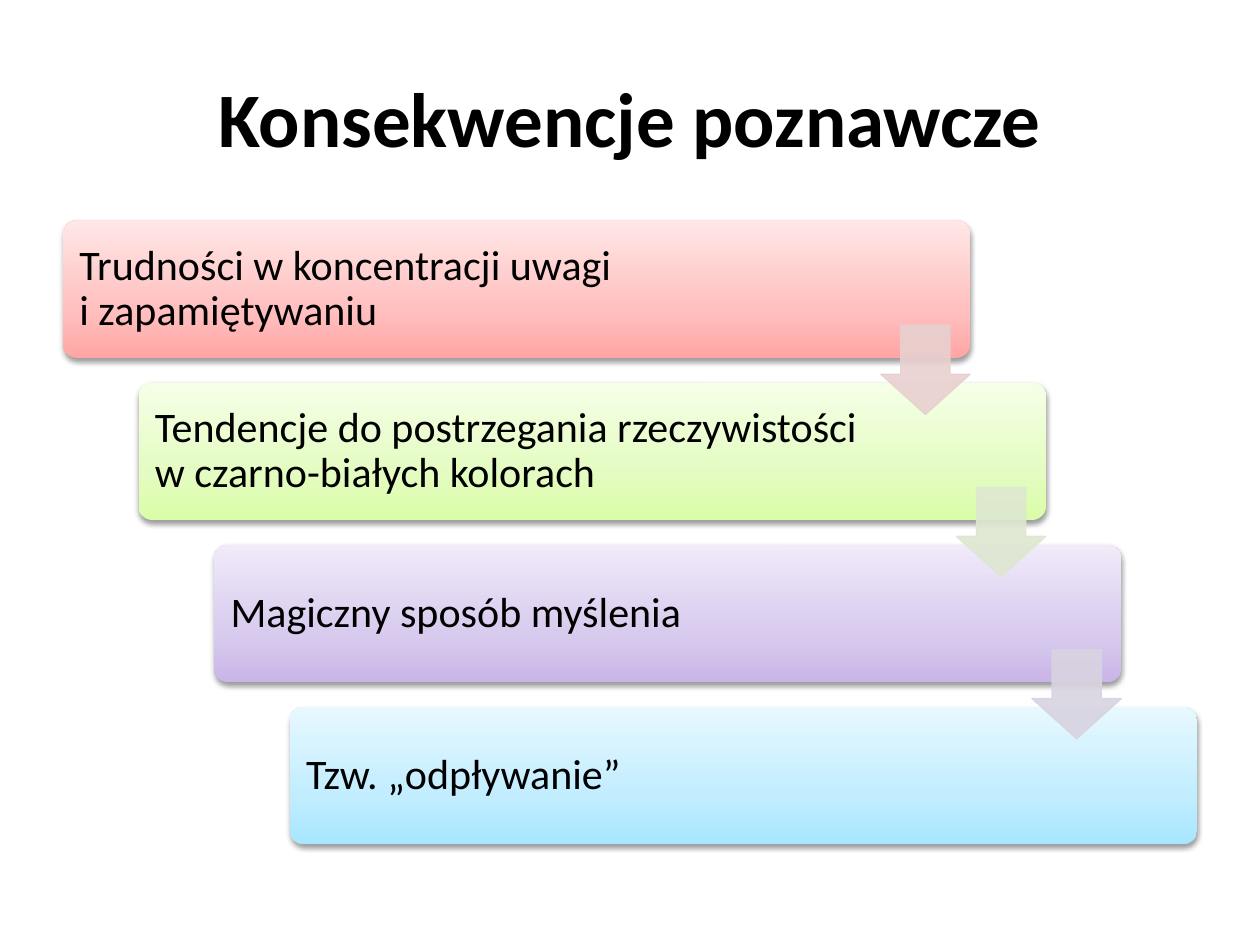
import copy

import pptx
import pptx.dml.color
import pptx.enum.shapes
import pptx.enum.text
import pptx.oxml
import pptx.oxml.ns
import pptx.util

Inches = pptx.util.Inches
SHAPES = pptx.enum.shapes.MSO_SHAPE
ALIGN = pptx.enum.text.PP_ALIGN

STEP_WIDTH, STEP_HEIGHT = 7.2, 1.09
STEP_LEFT, STEP_TOP = 0.5, 1.75
SHIFT_X, SHIFT_Y = 0.6, 1.287
ARROW_SIZE = 0.71
ARROW_DROP = 0.83  # from the top of a step to the top of its arrow
GRADIENT_POSITIONS = (0, 0.35, 1)

# Text, gradient from bottom to top, colour of the arrow to the next step
STEPS = [
    ("Trudności w koncentracji uwagi\ni zapamiętywaniu",
     ("FFA6A5", "FFC0BF", "FFE7E7"), "E8D0D0"),
    ("Tendencje do postrzegania rzeczywistości w czarno-białych kolorach",
     ("DAFDA7", "E4FCC2", "F5FFE7"), "DEE7D1"),
    ("Magiczny sposób myślenia",
     ("C9B5E8", "D8CBEE", "F0EAF9"), "D8D3E0"),
    ("Tzw. „odpływanie”",
     ("A7E6FF", "C1EDFF", "E7F8FF"), None),
]


def color(hex_text):
    return pptx.dml.color.RGBColor.from_string(hex_text)


def write_text(shape, text, size, bold=False, align=ALIGN.LEFT,
               line_spacing=None):
    frame = shape.text_frame
    frame.word_wrap = True
    frame.vertical_anchor = pptx.enum.text.MSO_ANCHOR.MIDDLE
    paragraph = frame.paragraphs[0]
    paragraph.text = text
    paragraph.alignment = align
    paragraph.line_spacing = line_spacing
    for run in paragraph.runs:
        run.font.name = "Calibri"
        run.font.size = pptx.util.Pt(size)
        run.font.bold = bold
        run.font.color.rgb = color("000000")


def fill_gradient(shape, colors):
    """Fill with a three-stop gradient that runs from bottom to top."""
    shape.fill.gradient()
    shape.fill.gradient_angle = 90
    stop_list = shape._element.spPr.find(".//" + pptx.oxml.ns.qn("a:gsLst"))
    stop_list.append(copy.deepcopy(stop_list[-1]))
    stops = shape.fill.gradient_stops
    for stop, position, hex_text in zip(stops, GRADIENT_POSITIONS, colors):
        stop.position = position
        stop.color.rgb = color(hex_text)


def add_shadow(shape):
    shape.shadow.inherit = False
    effects = shape._element.spPr.find(pptx.oxml.ns.qn("a:effectLst"))
    effects.append(pptx.oxml.parse_xml(
        f'<a:outerShdw {pptx.oxml.ns.nsdecls("a")} blurRad="40000" '
        'dist="20000" dir="5400000" rotWithShape="0">'
        '<a:srgbClr val="000000"><a:alpha val="38000"/></a:srgbClr>'
        '</a:outerShdw>'))


def set_opacity(shape, percent):
    """Apply one opacity to the fill and the line."""
    tag = pptx.oxml.ns.qn("a:srgbClr")
    for element in shape._element.spPr.iter(tag):
        alpha = element.makeelement(pptx.oxml.ns.qn("a:alpha"),
                                    {"val": str(percent * 1000)})
        element.append(alpha)


def add_step(slide, left, top, text, colors):
    step = slide.shapes.add_shape(
        SHAPES.ROUNDED_RECTANGLE, Inches(left), Inches(top),
        Inches(STEP_WIDTH), Inches(STEP_HEIGHT))
    step.adjustments[0] = 0.1
    fill_gradient(step, colors)
    step.line.fill.background()
    add_shadow(step)
    frame = step.text_frame
    frame.margin_left = frame.margin_top = frame.margin_bottom = Inches(0.1)
    frame.margin_right = Inches(1.3)  # keeps the text clear of the arrows
    write_text(step, text, 24, line_spacing=0.9)


def add_arrow(slide, left, top, hex_text):
    arrow = slide.shapes.add_shape(
        SHAPES.DOWN_ARROW, Inches(left), Inches(top),
        Inches(ARROW_SIZE), Inches(ARROW_SIZE))
    arrow.adjustments[0] = 0.55
    arrow.adjustments[1] = 0.45
    arrow.shadow.inherit = False
    arrow.fill.solid()
    arrow.fill.fore_color.rgb = color(hex_text)
    arrow.line.color.rgb = color(hex_text)
    arrow.line.width = pptx.util.Pt(0.75)
    set_opacity(arrow, 90)


def add_title(slide, text):
    title = slide.shapes.title
    title.left, title.top = Inches(0.5), Inches(0.3)
    title.width, title.height = Inches(9), Inches(1.25)
    write_text(title, text, 44, bold=True, align=ALIGN.CENTER)


def main():
    presentation = pptx.Presentation()
    presentation.slide_width = Inches(10)
    presentation.slide_height = Inches(7.5)
    slide = presentation.slides.add_slide(presentation.slide_layouts[5])
    add_title(slide, "Konsekwencje poznawcze")

    corners = [(STEP_LEFT + index * SHIFT_X, STEP_TOP + index * SHIFT_Y)
               for index in range(len(STEPS))]
    for (left, top), (text, colors, _) in zip(corners, STEPS):
        add_step(slide, left, top, text, colors)
    for (left, top), (_, _, arrow_color) in zip(corners, STEPS):
        if arrow_color:
            add_arrow(slide, left + STEP_WIDTH - ARROW_SIZE,
                      top + ARROW_DROP, arrow_color)
    presentation.save("out.pptx")


if __name__ == "__main__":
    main()
